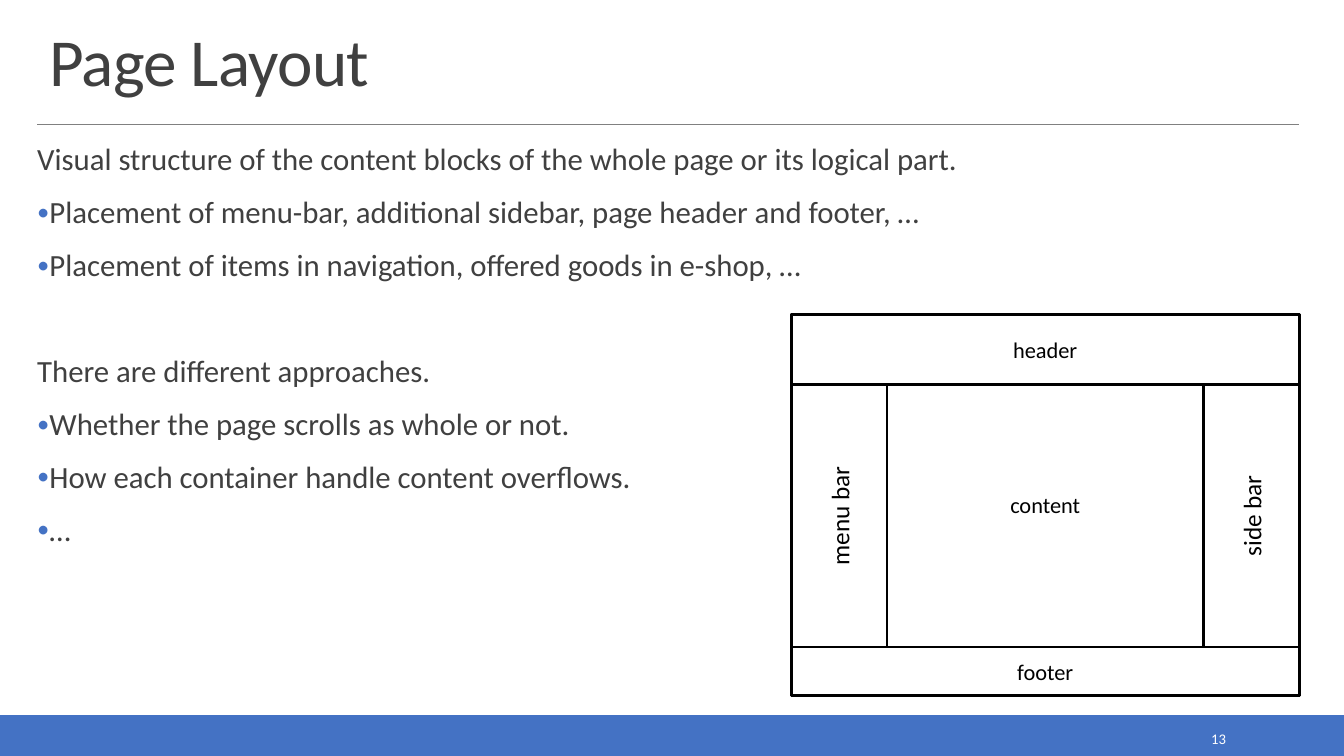
from pptx import Presentation
from pptx.dml.color import RGBColor
from pptx.enum import shapes, text
from pptx.oxml import parse_xml
from pptx.oxml.ns import nsdecls, qn
from pptx.util import Pt


def paint(fmt, color):
    fmt.solid()
    fmt.fore_color.rgb = RGBColor.from_string(color)


def style(para, size, color):
    for run in para.runs:
        run.font.name = "Calibri"
        run.font.size = Pt(size)
        paint(run.font.fill, color)


DARK, BLUE, BLACK = "404040", "4472C4", "000000"

deck = Presentation()
deck.slide_width, deck.slide_height = Pt(960), Pt(540)
slide = deck.slides.add_slide(deck.slide_layouts[5])
items = slide.shapes

band = items.add_shape(shapes.MSO_SHAPE.RECTANGLE, Pt(0), Pt(511.2), Pt(960), Pt(28.8))
band.shadow.inherit = False
paint(band.fill, BLUE)
paint(band.line.fill, BLUE)
band.line.width = Pt(1.25)

rule = items.add_connector(shapes.MSO_CONNECTOR.STRAIGHT, Pt(26.6), Pt(88.6), Pt(928), Pt(88.6))
paint(rule.line.fill, "808080")
rule.line.width = Pt(0.5)
rule._element.spPr.append(parse_xml(f"<a:effectLst {nsdecls('a')}/>"))

title = items.title
title.left, title.top, title.width, title.height = Pt(28.1), Pt(14.4), Pt(901.4), Pt(60.5)
frame = title.text_frame
frame.text = "Page Layout"
frame.auto_size = text.MSO_AUTO_SIZE.NONE
frame.vertical_anchor = text.MSO_ANCHOR.BOTTOM
head = frame.paragraphs[0]
head.alignment = text.PP_ALIGN.LEFT
head.line_spacing = 0.85
style(head, 48, DARK)
head.runs[0]._r.get_or_add_rPr().set("spc", "-50")

body = items.add_textbox(Pt(26.6), Pt(100.1), Pt(901.4), Pt(396.7)).text_frame
body.word_wrap = True
body.margin_left = body.margin_right = Pt(0)
body.margin_top = body.margin_bottom = Pt(3)
lines = [
    ("Visual structure of the content blocks of the whole page or its logical part.", False, 12),
    ("Placement of menu-bar, additional sidebar, page header and footer, …", True, 12),
    ("Placement of items in navigation, offered goods in e-shop, …", True, 12),
    ("There are different approaches.", False, 50),
    ("Whether the page scrolls as whole or not.", True, 12),
    ("How each container handle content overflows.", True, 12),
    ("…", True, 12),
]
body.text = "\n".join(line[0] for line in lines)
for para, (words, dot, gap) in zip(body.paragraphs, lines):
    para.line_spacing = 0.9
    para.space_before, para.space_after = Pt(gap), Pt(2)
    style(para, 22, DARK)
    if dot:
        props = para._p.get_or_add_pPr()
        props.set("marL", str(Pt(7.2)))
        props.set("indent", str(Pt(-7.2)))
        for xml in (
            f"<a:buClr {nsdecls('a')}><a:srgbClr val='{BLUE}'/></a:buClr>",
            f"<a:buSzPct {nsdecls('a')} val='80000'/>",
            f"<a:buFont {nsdecls('a')} typeface='Calibri'/>",
            f"<a:buChar {nsdecls('a')} char='•'/>",
        ):
            props.append(parse_xml(xml))

page = items.add_textbox(Pt(779.8), Pt(517.7), Pt(103), Pt(20.2)).text_frame
page.word_wrap = True
page.vertical_anchor = text.MSO_ANCHOR.MIDDLE
page.text = "13"
page.paragraphs[0].alignment = text.PP_ALIGN.RIGHT
style(page.paragraphs[0], 10.5, "FFFFFF")

left, top, wide, high = 565.2, 224.6, 362.8, 272.2
roof, foot, side = 50.4, 34.6, 68.4
mid = high - roof - foot
parts = [
    ("content", left, top, wide, high, 16),
    ("header", left, top, wide, roof, 16),
    ("footer", left, top + high - foot, wide, foot, 16),
    ("menu bar", left, top + roof, side, mid, 18),
    ("side bar", left + wide - side, top + roof, side, mid, 18),
]
group = items.add_group_shape()
for name, x, y, w, h, size in parts:
    box = group.shapes.add_shape(shapes.MSO_SHAPE.RECTANGLE, Pt(x), Pt(y), Pt(w), Pt(h))
    box.shadow.inherit = False
    box.fill.background()
    paint(box.line.fill, BLACK)
    box.line.width = Pt(2)
    label = box.text_frame
    label.text = name
    label.vertical_anchor = text.MSO_ANCHOR.MIDDLE
    label.paragraphs[0].alignment = text.PP_ALIGN.CENTER
    style(label.paragraphs[0], size, BLACK)
    if name.endswith("bar"):
        label._txBody.find(qn("a:bodyPr")).set("vert", "vert270")

deck.save("out.pptx")
